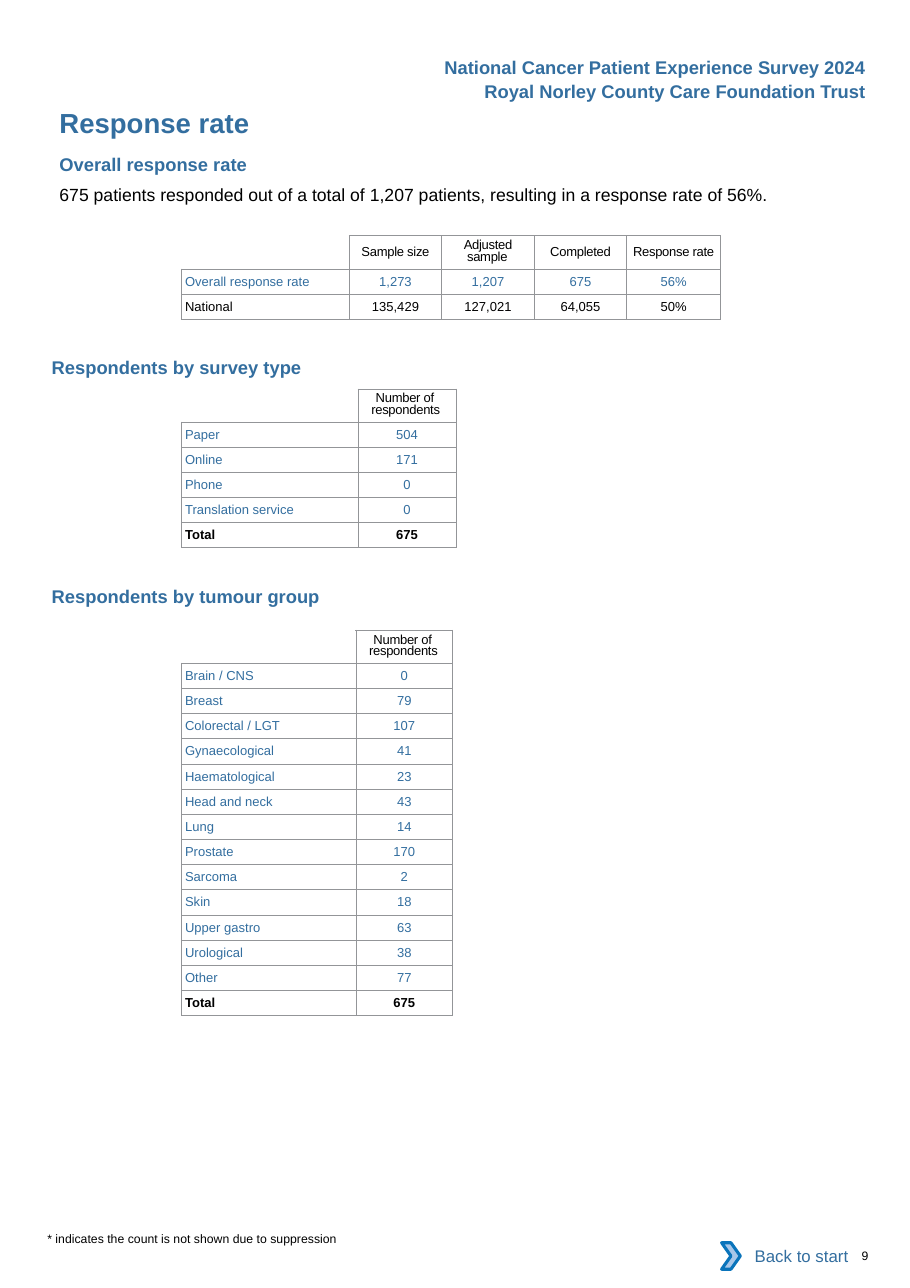
import pptx
import pptx.util
import pptx.dml.color
import pptx.enum.text
import pptx.enum.shapes
import pptx.oxml
import pptx.oxml.ns
from dataclasses import dataclass

Inches, Pt = pptx.util.Inches, pptx.util.Pt
ALIGN = pptx.enum.text.PP_ALIGN
ANCHOR = pptx.enum.text.MSO_ANCHOR
SHAPE = pptx.enum.shapes.MSO_SHAPE


@dataclass(frozen=True)
class Theme:
    font: str = "Arial"
    blue: str = "336E9F"
    black: str = "000000"
    white: str = "FFFFFF"
    rule: str = "939598"
    sky: str = "A8C7E9"
    edge: str = "0A74BB"
    title: float = 18
    head: float = 12
    body: float = 11.5
    link: float = 11
    cell: float = 8.5
    note: float = 8


T = Theme()

# Content: text, box, format
HEAD = dict(size=T.head, color=T.blue, bold=True)
BANNER = dict(HEAD, align=ALIGN.RIGHT)
INDENT = dict(left=0.01)
LINES = [
    ("Response rate", (0.53, 0.96, 4.13, 0.3),
     dict(INDENT, size=T.title, color=T.blue, bold=True, before=9.8)),
    ("Overall response rate", (0.53, 1.39, 4.13, 0.2), dict(HEAD, **INDENT, before=6.6)),
    ("675 patients responded out of a total of 1,207 patients, "
     "resulting in a response rate of 56%.", (0.53, 1.67, 7.2, 0.19),
     dict(INDENT, size=T.body, before=6)),
    ("Respondents by survey type", (0.46, 3.23, 2.5, 0.2), dict(HEAD, **INDENT, before=1)),
    ("Respondents by tumour group", (0.46, 5.31, 2.6, 0.2), dict(HEAD, **INDENT, before=1)),
    ("Royal Norley County Care Foundation Trust", (4.16, 0.73, 3.7, 0.2), BANNER),
    ("National Cancer Patient Experience Survey 2024", (3.86, 0.51, 4, 0.2), BANNER),
    ("* indicates the count is not shown due to suppression", (0.42, 11.18, 2.8, 0.13),
     dict(INDENT, size=T.note, before=1)),
    ("9", (7.72, 11.33, 0.51, 0.13), dict(size=T.note, left=0.1, before=0.2)),
]

RATES = [
    ("", "Sample size", "Adjusted sample", "Completed", "Response rate"),
    ("Overall response rate", "1,273", "1,207", "675", "56%"),
    ("National", "135,429", "127,021", "64,055", "50%"),
]
COUNT = ("", "Number of respondents")
TYPES = [
    COUNT, ("Paper", "504"), ("Online", "171"), ("Phone", "0"),
    ("Translation service", "0"), ("Total", "675"),
]
TUMOURS = [
    COUNT, ("Brain / CNS", "0"), ("Breast", "79"), ("Colorectal / LGT", "107"),
    ("Gynaecological", "41"), ("Haematological", "23"), ("Head and neck", "43"),
    ("Lung", "14"), ("Prostate", "170"), ("Sarcoma", "2"), ("Skin", "18"),
    ("Upper gastro", "63"), ("Urological", "38"), ("Other", "77"), ("Total", "675"),
]
# Rows, top, height, header height, column widths
TABLES = [
    (RATES, 2.14, 0.74, 0.28, (1.52, 0.84, 0.84, 0.84, 0.85)),
    (TYPES, 3.53, 1.4, 0.26, (1.6, 0.89)),
    (TUMOURS, 5.72, 3.46, 0.26, (1.58, 0.88)),
]
SIDE = 1.65
# Headers that run over two lines
WRAPPED = {
    "Adjusted sample": dict(left=0.23, first=-0.03, pitch=7.6, before=2.3),
    "Number of respondents": dict(left=0.12, first=0.04, pitch=7.6, before=1.4),
}


def rgb(code):
    return pptx.dml.color.RGBColor.from_string(code)


def write(frame, text, size=T.cell, color=T.black, bold=False, align=None,
          left=0, first=0, before=0, pitch=None, track=0):
    para = frame.paragraphs[0]
    para.alignment = align
    para.space_before = Pt(before)
    if pitch:
        para.line_spacing = Pt(pitch)
    props = para._p.get_or_add_pPr()
    props.set("marL", str(Inches(left)))
    props.set("indent", str(Inches(first)))
    run = para.add_run()
    run.text = text
    font = run.font
    font.name, font.size, font.bold = T.font, Pt(size), bold
    font.color.rgb = rgb(color)
    if track:
        run._r.get_or_add_rPr().set("spc", str(round(track * 100)))


def border(cell, sides):
    props = cell._tc.get_or_add_tcPr()
    for spot, side in enumerate(sides):
        props.insert(spot, pptx.oxml.parse_xml(
            f'<a:ln{side} {pptx.oxml.ns.nsdecls("a")} w="{Pt(0.5)}">'
            f'<a:solidFill><a:srgbClr val="{T.rule}"/></a:solidFill></a:ln{side}>'))


def style(row, col, label, text):
    if row == 0:
        if text in WRAPPED:
            return dict(WRAPPED[text], track=-0.2)
        return dict(align=ALIGN.CENTER, before=4.7, track=-0.2)
    plain = label in ("National", "Total")
    look = dict(color=T.black if plain else T.blue, bold=label == "Total", before=2)
    look.update(dict(left=0.03) if col == 0 else dict(align=ALIGN.CENTER))
    return look


def grid(slide, rows, top, high, head, widths):
    box = [Inches(v) for v in (SIDE, top, sum(widths), high)]
    table = slide.shapes.add_table(len(rows), len(widths), *box).table
    table.first_row = table.horz_banding = False
    for col, width in enumerate(widths):
        table.columns[col].width = Inches(width)
    step = (high - head) / (len(rows) - 1)
    for row, values in enumerate(rows):
        table.rows[row].height = Inches(step if row else head)
        for col, text in enumerate(values):
            cell = table.cell(row, col)
            cell.margin_left = cell.margin_right = 0
            cell.margin_top = cell.margin_bottom = 0
            cell.vertical_anchor = ANCHOR.MIDDLE
            cell.fill.background()
            border(cell, "LRTB" if row or col else "RB")
            write(cell.text_frame, text, **style(row, col, values[0], text))


def block(group, kind, box, fill):
    shape = group.shapes.add_shape(kind, *[Inches(v) for v in box])
    shape.shadow.inherit = False
    shape.fill.solid()
    shape.fill.fore_color.rgb = rgb(fill)
    return shape


def main():
    deck = pptx.Presentation()
    deck.slide_width, deck.slide_height = Inches(8.26), Inches(11.69)
    slide = deck.slides.add_slide(deck.slide_layouts[6])

    # Headings and notes
    for text, box, look in LINES:
        frame = slide.shapes.add_textbox(*[Inches(v) for v in box]).text_frame
        frame.word_wrap = True
        frame.margin_left = frame.margin_right = 0
        frame.margin_top = frame.margin_bottom = 0
        write(frame, text, **look)

    # Tables
    for table in TABLES:
        grid(slide, *table)

    # Back button
    group = slide.shapes.add_group_shape()
    label = block(group, SHAPE.RECTANGLE, (6.62, 11.19, 1.18, 0.42), T.white)
    label.line.fill.background()
    label.text_frame.word_wrap = True
    label.text_frame.vertical_anchor = ANCHOR.MIDDLE
    write(label.text_frame, "Back to start", size=T.link, color=T.blue, align=ALIGN.RIGHT)
    arrow = block(group, SHAPE.CHEVRON, (6.55, 11.28, 0.17, 0.24), T.sky)
    arrow.line.color.rgb = rgb(T.edge)
    arrow.line.width = Pt(2)

    deck.save("out.pptx")


if __name__ == "__main__":
    main()
